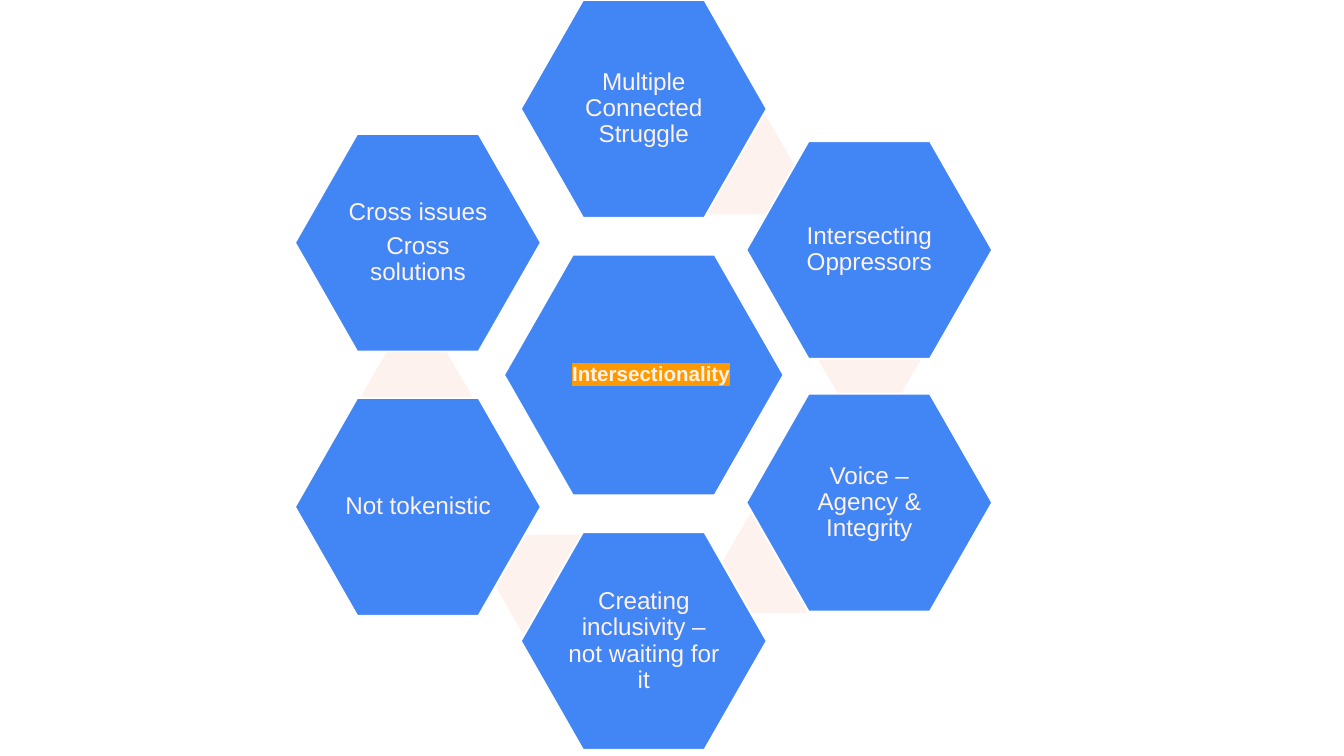
from dataclasses import dataclass

from lxml import etree
from pptx import Presentation
from pptx.dml.color import RGBColor
from pptx.enum.shapes import MSO_SHAPE
from pptx.enum.text import MSO_ANCHOR, PP_ALIGN
from pptx.oxml.ns import qn
from pptx.util import Inches, Pt

HEXAGON = MSO_SHAPE.HEXAGON
MIDDLE = MSO_ANCHOR.MIDDLE
CENTER = PP_ALIGN.CENTER
BLANK_LAYOUT = 6


@dataclass(frozen=True)
class Theme:
    font: str = "Arial"
    blue: str = "4285F4"
    blush: str = "FEF2EE"
    white: str = "FFFFFF"
    orange: str = "FF9900"
    core_size: int = 11
    ring_size: int = 13
    outline: int = 1
    line_spacing: float = 0.9
    paragraph_gap: int = 4


def apply_format(target, values):
    for name, value in values.items():
        setattr(target, name, value)


class HexagonSlide:
    """Places hexagons by their centre on a grid 100 columns wide."""

    COLUMNS = 100

    def __init__(self, presentation, theme):
        self.theme = theme
        self.cell = presentation.slide_width / self.COLUMNS
        self.slide = presentation.slides.add_slide(
            presentation.slide_layouts[BLANK_LAYOUT])

    def hexagon(self, center, size, color, slant):
        (column, row), (width, height) = center, size
        box = (column - width / 2, row - height / 2, width, height)
        shape = self.slide.shapes.add_shape(
            HEXAGON, *(round(length * self.cell) for length in box))
        shape.adjustments[0] = slant
        shape.shadow.inherit = False
        shape.fill.solid()
        shape.fill.fore_color.rgb = RGBColor.from_string(color)
        shape.line.fill.background()
        return shape

    def link(self, center):
        self.hexagon(center, (8.4, 7.4), self.theme.blush, 0.289)

    def topic(self, center, size, paragraphs, text_size, inset=0.02,
              left_inset=None, bold=False, highlight=None):
        theme = self.theme
        shape = self.hexagon(center, size, theme.blue, 0.286)
        shape.line.color.rgb = RGBColor.from_string(theme.white)
        shape.line.width = Pt(theme.outline)

        margin = Inches(inset)
        left_margin = margin if left_inset is None else Inches(left_inset)
        frame = shape.text_frame
        apply_format(frame, {
            "word_wrap": True, "vertical_anchor": MIDDLE,
            "margin_left": left_margin, "margin_right": margin,
            "margin_top": margin, "margin_bottom": margin})
        for index, text in enumerate(paragraphs):
            paragraph = frame.add_paragraph() if index else frame.paragraphs[0]
            apply_format(paragraph, {
                "alignment": CENTER, "line_spacing": theme.line_spacing,
                "space_before": Pt(theme.paragraph_gap if index else 0)})
            run = paragraph.add_run()
            run.text = text
            apply_format(run.font, {
                "name": theme.font, "size": Pt(text_size), "bold": bold})
            run.font.color.rgb = RGBColor.from_string(theme.blush)
            if highlight:
                self.highlight(run, highlight)

    @staticmethod
    def highlight(run, color):
        marker = etree.Element(qn("a:highlight"))
        etree.SubElement(marker, qn("a:srgbClr"), val=color)
        run.font._element.find(qn("a:solidFill")).addnext(marker)


def main():
    presentation = Presentation()
    presentation.slide_width = Inches(10)
    presentation.slide_height = presentation.slide_width * 9 // 16
    theme = Theme()
    slide = HexagonSlide(presentation, theme)

    left, middle, right = 31.1, 47.9, 64.68
    links = [(54.9, 12.25), (64.7, 26.1), (57.9, 41.9), (41, 43.5), (31, 29.6)]
    ring = [
        ((middle, 8.1), ["Multiple Connected Struggle"]),
        ((right, 18.6), ["Intersecting Oppressors"]),
        ((right, 37.4), ["Voice – Agency & Integrity"]),
        ((middle, 47.7), ["Creating inclusivity – not waiting for it"]),
        ((left, 37.72), ["Not tokenistic"]),
        ((left, 18.06), ["Cross issues", "Cross solutions"]),
    ]

    for center in links:
        slide.link(center)
    slide.topic((middle, 27.9), (20.8, 17.9), ["Intersectionality"],
                theme.core_size, inset=0.01, left_inset=0.12, bold=True,
                highlight=theme.orange)
    for center, paragraphs in ring:
        slide.topic(center, (18.3, 16.2), paragraphs, theme.ring_size)

    presentation.save("out.pptx")


if __name__ == "__main__":
    main()
